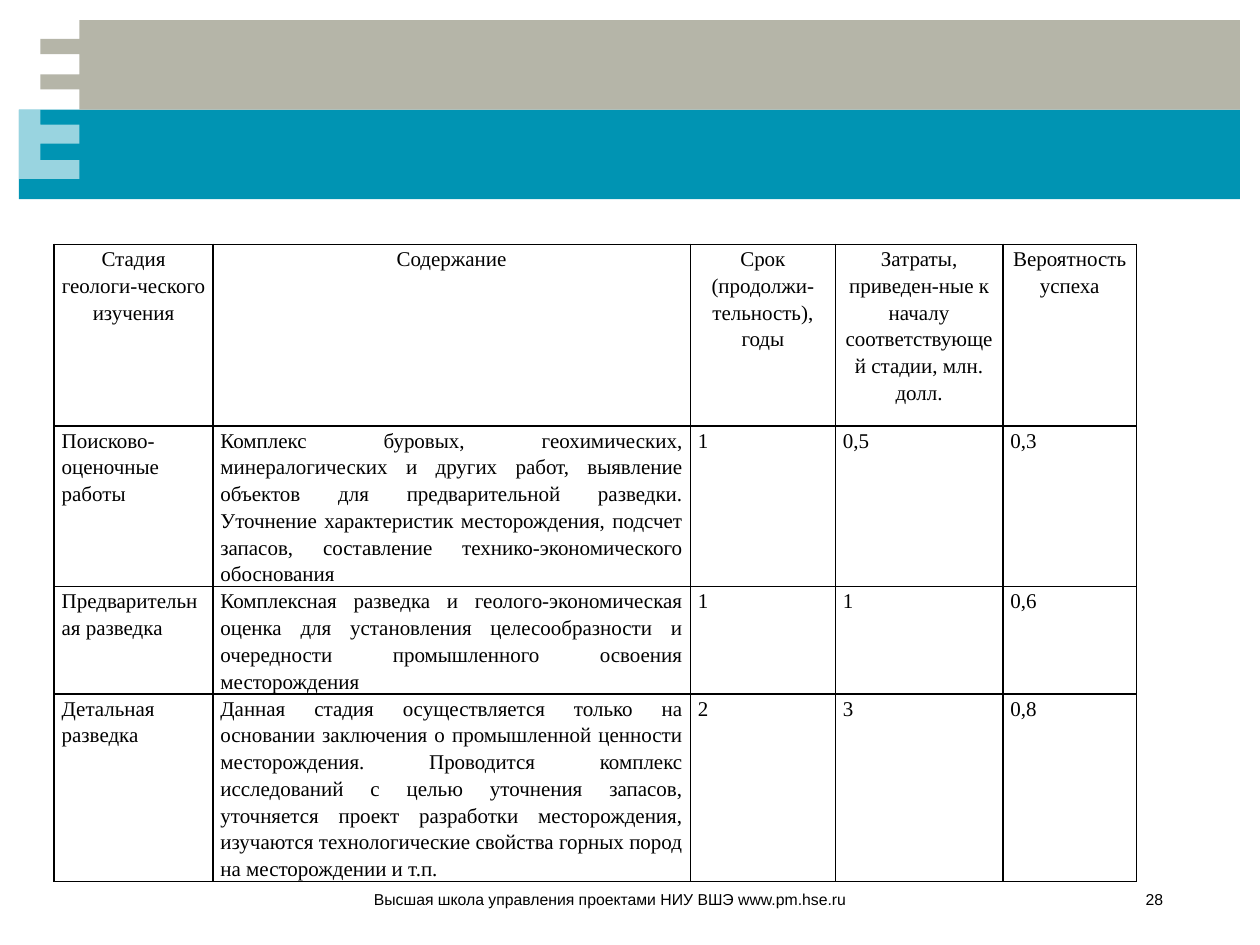
from lxml.etree import SubElement
from pptx import Presentation
from pptx.dml.color import RGBColor
from pptx.enum.shapes import MSO_SHAPE
from pptx.enum.text import MSO_ANCHOR, PP_ALIGN
from pptx.oxml.ns import qn
from pptx.util import Inches, Pt

BLACK = RGBColor(0x00, 0x00, 0x00)
WHITE = RGBColor(0xFF, 0xFF, 0xFF)
TEAL = RGBColor(0x00, 0x94, 0xB3)
GREY = RGBColor(0xB5, 0xB5, 0xA8)

STAGES = [
    ("Стадия геологи-ческого изучения", "Содержание",
     "Срок (продолжи-тельность), годы",
     "Затраты, приведен-ные к началу соответствующей стадии, млн. долл.",
     "Вероятность успеха"),
    ("Поисково-оценочные работы",
     "Комплекс буровых, геохимических, минералогических и других работ, "
     "выявление объектов для предварительной разведки. Уточнение "
     "характеристик месторождения, подсчет запасов, составление "
     "технико-экономического обоснования",
     "1", "0,5", "0,3"),
    ("Предварительная разведка",
     "Комплексная разведка и геолого-экономическая оценка для установления "
     "целесообразности и очередности промышленного освоения месторождения",
     "1", "1", "0,6"),
    ("Детальная разведка",
     "Данная стадия осуществляется только на основании заключения о "
     "промышленной ценности месторождения. Проводится комплекс исследований "
     "с целью уточнения запасов, уточняется проект разработки месторождения, "
     "изучаются технологические свойства горных пород на месторождении и т.п.",
     "2", "3", "0,8"),
]
COLUMN_WIDTHS = [1.26, 3.79, 1.15, 1.33, 1.06]
ROW_HEIGHTS = [1.44, 1.08, 0.72, 1.26]

# Text, left, width
FOOTERS = [
    ("Высшая школа управления проектами НИУ ВШЭ www.pm.hse.ru", 1.14, 5.67),
    ("28", 8.86, 0.47),
]

BAND_LEFT, BAND_RIGHT, BAND_TOP, BAND_MIDDLE = 0.15, 9.84, 0.16, 0.87
BAND_HEIGHT = BAND_MIDDLE - BAND_TOP
TOOTH_LEFT, TOOTH_RIGHT = 0.32, 0.63
GREY_COMB = [
    (TOOTH_RIGHT, BAND_TOP), (BAND_RIGHT, BAND_TOP),
    (BAND_RIGHT, BAND_MIDDLE), (TOOTH_RIGHT, BAND_MIDDLE),
    (TOOTH_RIGHT, 0.71), (TOOTH_LEFT, 0.71),
    (TOOTH_LEFT, 0.59), (TOOTH_RIGHT, 0.59),
    (TOOTH_RIGHT, 0.43), (TOOTH_LEFT, 0.43),
    (TOOTH_LEFT, 0.31), (TOOTH_RIGHT, 0.31),
]
PALE_COMB = [
    (TOOTH_RIGHT, 1.42), (TOOTH_RIGHT, 1.27),
    (TOOTH_LEFT, 1.27), (TOOTH_LEFT, 1.14),
    (TOOTH_RIGHT, 1.14), (TOOTH_RIGHT, 0.99),
    (TOOTH_LEFT, 0.99), (TOOTH_LEFT, BAND_MIDDLE),
    (BAND_LEFT, BAND_MIDDLE), (BAND_LEFT, 1.42),
]


def paint(shape, color):
    shape.shadow.inherit = False
    shape.fill.solid()
    shape.fill.fore_color.rgb = color
    shape.line.fill.background()


def add_comb(slide, points, color):
    corners = [(Inches(x), Inches(y)) for x, y in points]
    builder = slide.shapes.build_freeform(*corners[0])
    builder.add_line_segments(corners[1:], close=True)
    comb = builder.convert_to_shape()
    paint(comb, color)
    return comb


def style_text(paragraph, font_name, size, align):
    paragraph.alignment = align
    for run in paragraph.runs:
        run.font.name = font_name
        run.font.size = Pt(size)
        run.font.color.rgb = BLACK


def add_borders(cell):
    properties = cell._tc.get_or_add_tcPr()
    for side in ("a:lnL", "a:lnR", "a:lnT", "a:lnB"):
        line = SubElement(properties, qn(side), w=str(Pt(1)))
        fill = SubElement(line, qn("a:solidFill"))
        SubElement(fill, qn("a:srgbClr"), val=str(BLACK))


def add_header(slide):
    teal_band = slide.shapes.add_shape(
        MSO_SHAPE.RECTANGLE, Inches(BAND_LEFT), Inches(BAND_MIDDLE),
        Inches(BAND_RIGHT - BAND_LEFT), Inches(BAND_HEIGHT))
    paint(teal_band, TEAL)
    add_comb(slide, GREY_COMB, GREY)
    pale_comb = add_comb(slide, PALE_COMB, WHITE)
    white = pale_comb._element.spPr.find(qn("a:solidFill"))[0]
    SubElement(white, qn("a:alpha"), val="60000")


def add_stage_table(slide):
    table = slide.shapes.add_table(
        len(STAGES), len(COLUMN_WIDTHS), Inches(0.43), Inches(1.94),
        Inches(sum(COLUMN_WIDTHS)), Inches(sum(ROW_HEIGHTS))).table
    for column, width in zip(table.columns, COLUMN_WIDTHS):
        column.width = Inches(width)
    for row, height in zip(table.rows, ROW_HEIGHTS):
        row.height = Inches(height)
    for r, stage in enumerate(STAGES):
        for c, content in enumerate(stage):
            cell = table.cell(r, c)
            cell.text = content
            cell.margin_left = cell.margin_right = Inches(0.06)
            cell.margin_top = cell.margin_bottom = 0
            add_borders(cell)
            cell.fill.background()
            paragraph = cell.text_frame.paragraphs[0]
            paragraph.line_spacing = 1.15
            style_text(paragraph, "Times New Roman", 12,
                       PP_ALIGN.JUSTIFY if r else PP_ALIGN.CENTER)
    table.first_row = table.horz_banding = False


def add_footers(slide):
    for content, left, width in FOOTERS:
        frame = slide.shapes.add_textbox(
            Inches(left), Inches(7.06), Inches(width), Inches(0.15)).text_frame
        frame.text = content
        frame.word_wrap = True
        frame.vertical_anchor = MSO_ANCHOR.MIDDLE
        style_text(frame.paragraphs[0], "Arial", 9, PP_ALIGN.RIGHT)


def main():
    presentation = Presentation()
    presentation.slide_width = Inches(10)
    presentation.slide_height = Inches(7.5)
    slide = presentation.slides.add_slide(presentation.slide_layouts[6])
    add_header(slide)
    add_stage_table(slide)
    add_footers(slide)
    presentation.save("out.pptx")


if __name__ == "__main__":
    main()
